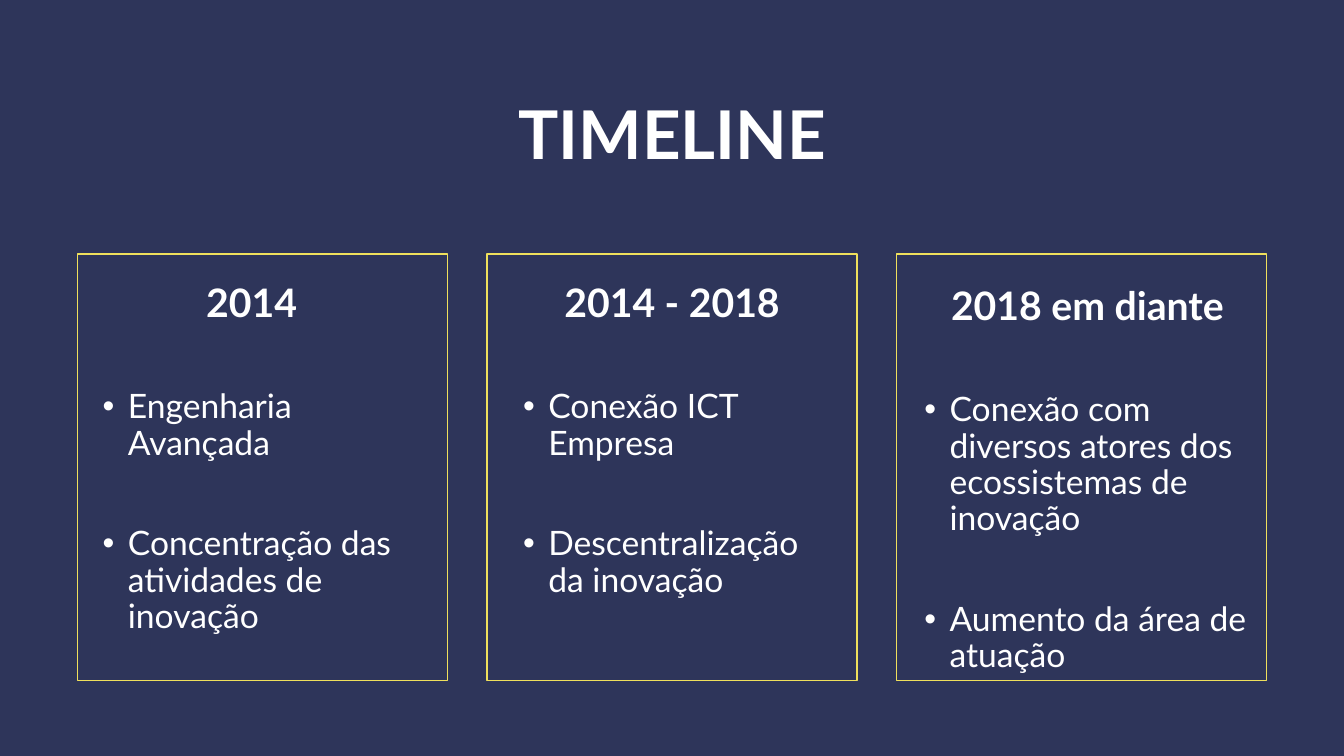
from lxml.etree import SubElement
from pptx import Presentation
from pptx.dml.color import RGBColor
from pptx.enum.shapes import MSO_SHAPE as Shape
from pptx.enum.text import MSO_ANCHOR as Anchor, PP_ALIGN as Align
from pptx.oxml.ns import qn
from pptx.util import Inches, Pt

NAVY = RGBColor(0x2E, 0x35, 0x5A)
YELLOW = RGBColor(0xEF, 0xE0, 0x5C)
WHITE = RGBColor(0xFF, 0xFF, 0xFF)

CARD_LEFT, CARD_TOP, CARD_STEP = 0.77, 2.52, 4.06
CARD_WIDTH, CARD_HEIGHT = 3.67, 4.23

# Each period: text box (left, top, width, height), heading, points
PERIODS = [
    ((0.92, 2.76, 3.15, 3.57), "2014",
     ["Engenharia Avançada", "Concentração das atividades de inovação"]),
    ((5.09, 2.76, 3.15, 3.57), "2014 - 2018",
     ["Conexão ICT Empresa", "Descentralização da inovação"]),
    ((9.07, 2.79, 3.43, 3.96), "2018 em diante",
     ["Conexão com diversos atores dos ecossistemas de inovação",
      "Aumento da área de atuação"]),
]


class TimelineSlide:
    font = "Lato"
    text_color = WHITE

    def __init__(self, page):
        self.page = page

    def rectangle(self, left, top, width, height, fill=None, line=None):
        box = self.page.shapes.add_shape(
            Shape.RECTANGLE, Inches(left), Inches(top), Inches(width), Inches(height))
        box.shadow.inherit = False
        if fill is None:
            box.fill.background()
        else:
            box.fill.solid()
            box.fill.fore_color.rgb = fill
        if line is None:
            box.line.fill.background()
        else:
            box.line.color.rgb = line
            box.line.width = Pt(1)

    def text_frame(self, left, top, width, height):
        box = self.page.shapes.add_textbox(
            Inches(left), Inches(top), Inches(width), Inches(height))
        frame = box.text_frame
        frame.word_wrap = True
        frame.vertical_anchor = Anchor.TOP
        return frame

    def add_span(self, para, text, size, bold=False):
        span = para.add_run()
        span.text = text
        span.font.name = self.font
        span.font.size = Pt(size)
        span.font.bold = bold
        span.font.color.rgb = self.text_color

    def heading(self, para, text, size, line_spacing):
        para.alignment = Align.CENTER
        para.line_spacing = line_spacing
        self.add_span(para, text, size, bold=True)

    def bullet(self, para, text):
        para.line_spacing = 0.9
        para.space_before = Pt(46)
        properties = para._p.get_or_add_pPr()
        properties.set("marL", str(Inches(0.25)))
        properties.set("indent", str(-Inches(0.25)))
        SubElement(properties, qn("a:buFont"), typeface="Arial")
        SubElement(properties, qn("a:buChar"), char="•")
        self.add_span(para, text, 24)

    def period(self, bounds, title, points):
        frame = self.text_frame(*bounds)
        self.heading(frame.paragraphs[0], title, 28, 0.9)
        for point in points:
            self.bullet(frame.add_paragraph(), point)


def main():
    deck = Presentation()
    deck.slide_width, deck.slide_height = Inches(13.33), Inches(7.5)
    timeline = TimelineSlide(deck.slides.add_slide(deck.slide_layouts[6]))

    # Backdrop and title
    timeline.rectangle(0, 0, 13.33, 7.5, fill=NAVY)
    title = timeline.text_frame(3.2, 0.81, 6.94, 0.9)
    timeline.heading(title.paragraphs[0], "TIMELINE", 48, Pt(62))

    # Cards, then their texts
    for column in range(len(PERIODS)):
        timeline.rectangle(CARD_LEFT + column * CARD_STEP, CARD_TOP,
                           CARD_WIDTH, CARD_HEIGHT, line=YELLOW)
    for bounds, heading, points in PERIODS:
        timeline.period(bounds, heading, points)

    deck.save("out.pptx")


if __name__ == "__main__":
    main()
